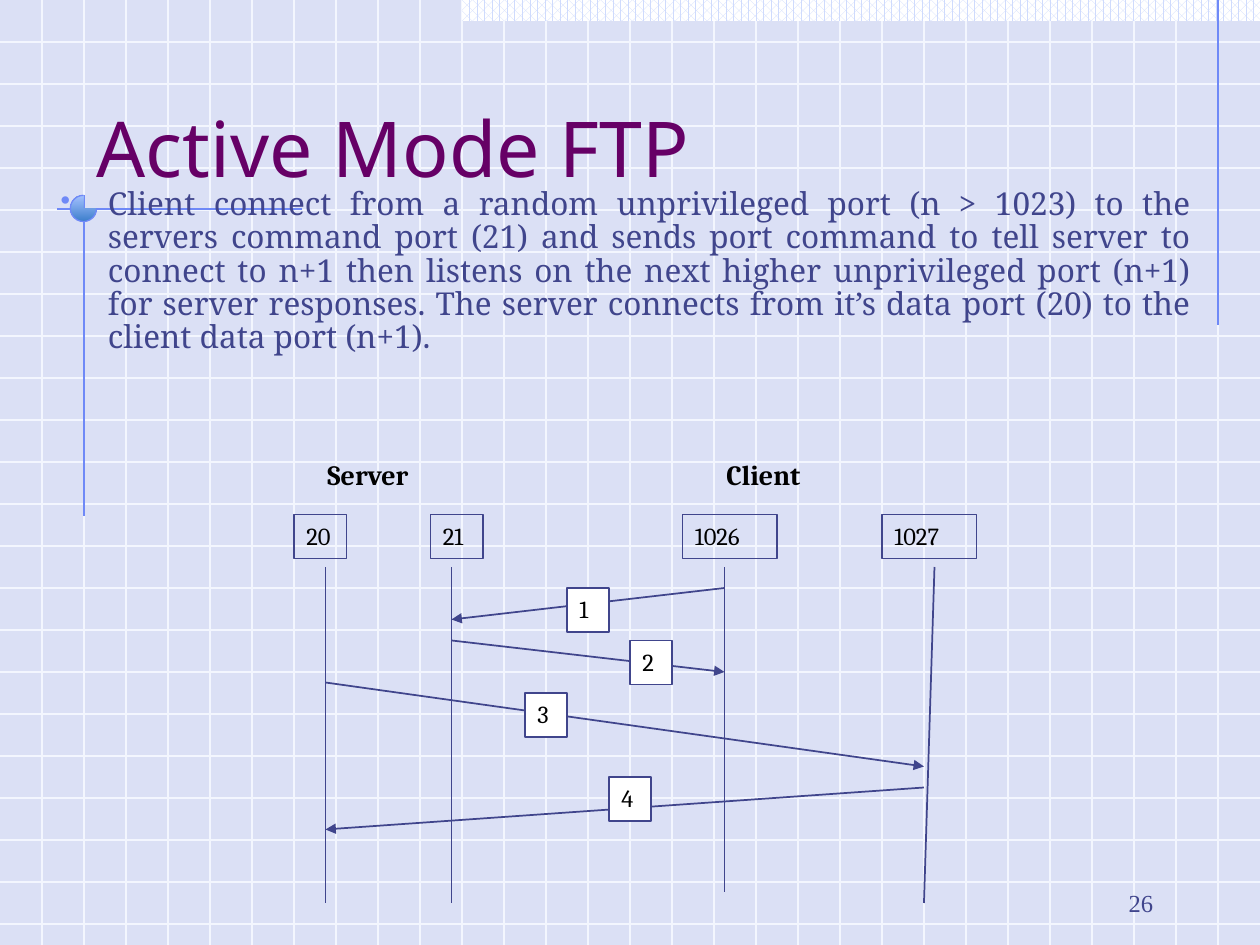
import pptx
import pptx.util
import pptx.dml.color
import pptx.enum.dml
import pptx.enum.shapes
import pptx.enum.text
import pptx.oxml
import pptx.oxml.ns
import lxml.etree

PX = 7620  # EMU per px, 120 px to the inch
W, H = 1200, 900
COLORS = {
    "back": "DBE0F5", "grid": "F3F6FE", "dots": "CFDBFD", "white": "FFFFFF",
    "accent": "6F89F7", "title": "660066", "ink": "40458C", "black": "000000",
}
RGB = {name: pptx.dml.color.RGBColor.from_string(c) for name, c in COLORS.items()}
ALIGN = pptx.enum.text.PP_ALIGN
ANCHOR = pptx.enum.text.MSO_ANCHOR
SHAPE = pptx.enum.shapes.MSO_SHAPE

prs = pptx.Presentation()
prs.slide_width, prs.slide_height = W * PX, H * PX
s = prs.slides.add_slide(prs.slide_layouts[6])
s.background.fill.solid()
s.background.fill.fore_color.rgb = RGB["back"]


def add_line(x1, y1, x2, y2, color, width=0.75, arrow=False):
    cx = s.shapes.add_connector(pptx.enum.shapes.MSO_CONNECTOR.STRAIGHT,
                                x1 * PX, y1 * PX, x2 * PX, y2 * PX)
    cx.line.color.rgb = RGB[color]
    cx.line.width = pptx.util.Pt(width)
    if arrow:
        ln = cx.line._get_or_add_ln()
        lxml.etree.SubElement(ln, pptx.oxml.ns.qn("a:tailEnd"), type="triangle")
    lxml.etree.SubElement(cx._element.spPr, pptx.oxml.ns.qn("a:effectLst"))


def add_text(box, text, color, size, font, bold=False, align=ALIGN.LEFT,
             anchor=ANCHOR.TOP, boxed=False, fill=None):
    x, y, w, h = [v * PX for v in box]
    if boxed:
        sp = s.shapes.add_shape(SHAPE.RECTANGLE, x, y, w, h)
        sp.shadow.inherit = False
        sp.line.color.rgb = RGB["ink"]
        sp.line.width = pptx.util.Pt(1)
        if fill:
            sp.fill.solid()
            sp.fill.fore_color.rgb = RGB[fill]
        else:
            sp.fill.background()
    else:
        sp = s.shapes.add_textbox(x, y, w, h)
    tf = sp.text_frame
    tf.word_wrap = True
    tf.vertical_anchor = anchor
    p = tf.paragraphs[0]
    p.alignment = align
    r = p.add_run()
    r.text = text
    for key, value in {"size": pptx.util.Pt(size), "name": font, "bold": bold}.items():
        setattr(r.font, key, value)
    r.font.color.rgb = RGB[color]
    return p


# Background grid
for y in range(40, H, 40):
    add_line(0, y, W, y, "grid")
for x in range(40, W, 40):
    add_line(x, 0, x, H, "grid")

# Dotted band, accent lines and open circle
sp = s.shapes.add_shape(SHAPE.RECTANGLE, 440 * PX, 0, 760 * PX, 20 * PX)
sp.shadow.inherit = False
sp.line.fill.background()
sp.fill.patterned()
sp.fill.pattern = pptx.enum.dml.MSO_PATTERN.PERCENT_60
sp.fill.fore_color.rgb = RGB["dots"]
sp.fill.back_color.rgb = RGB["white"]
for ends in [(1160, 0, 1160, 310), (288, 199, 54, 199), (80, 186, 80, 491)]:
    add_line(*ends, "accent")
sp = s.shapes.add_shape(SHAPE.ARC, 67 * PX, 186 * PX, 25 * PX, 25 * PX)
sp.shadow.inherit = False
sp.adjustments[0], sp.adjustments[1] = 0, 162  # 0 to 270 degrees
sp.line.color.rgb = RGB["accent"]
sp.line.width = pptx.util.Pt(0.75)

# Title, body and slide number
add_text((80, 40, 1020, 150), "Active Mode FTP", "title", 44, "Noto Sans",
         anchor=ANCHOR.BOTTOM)
p = add_text(
    (46, 174, 1100, 221),
    "Client connect from a random unprivileged port (n > 1023) to the servers "
    "command port (21) and sends port command to tell server to connect to n+1 "
    "then listens on the next higher unprivileged port (n+1) for server responses. "
    "The server connects from it’s data port (20) to the client data port (n+1).",
    "ink", 18, "Noto Serif", align=ALIGN.JUSTIFY)
p.line_spacing = 0.88
pPr = p._p.get_or_add_pPr()
for key, value in {"marL": 45 * PX, "indent": -45 * PX}.items():
    pPr.set(key, str(value))
clr = lxml.etree.SubElement(pPr, pptx.oxml.ns.qn("a:buClr"))
lxml.etree.SubElement(clr, pptx.oxml.ns.qn("a:srgbClr"), val=COLORS["accent"])
lxml.etree.SubElement(pPr, pptx.oxml.ns.qn("a:buSzPct"), val="90000")
lxml.etree.SubElement(pPr, pptx.oxml.ns.qn("a:buChar"), char="•")
add_text((860, 820, 250, 60), "26", "ink", 14, "Times New Roman",
         align=ALIGN.RIGHT, anchor=ANCHOR.BOTTOM)

# Host names and ports
for x, host in [(680, "Client"), (300, "Server")]:
    add_text((x, 430, 170, 44), host, "black", 16, "Cambria", bold=True)
for x, w, port in [(280, 50, "20"), (410, 50, "21"), (650, 90, "1026"), (840, 90, "1027")]:
    add_text((x, 490, w, 42), port, "black", 14, "Cambria", boxed=True)

# Lifelines
for x1, x2, y2 in [(310, 310, 860), (430, 430, 860), (690, 690, 850), (890, 880, 860)]:
    add_line(x1, 540, x2, y2, "ink", 1)

# Messages, then their numbers on top
for ends in [(690, 560, 430, 590), (430, 610, 690, 640),
             (310, 650, 880, 730), (880, 750, 310, 790)]:
    add_line(*ends, "ink", 1, arrow=True)
for n, (x, y) in enumerate([(540, 560), (600, 610), (500, 660), (580, 740)], 1):
    add_text((x, y, 40, 42), str(n), "black", 14, "Cambria", boxed=True, fill="white")

prs.save("out.pptx")
